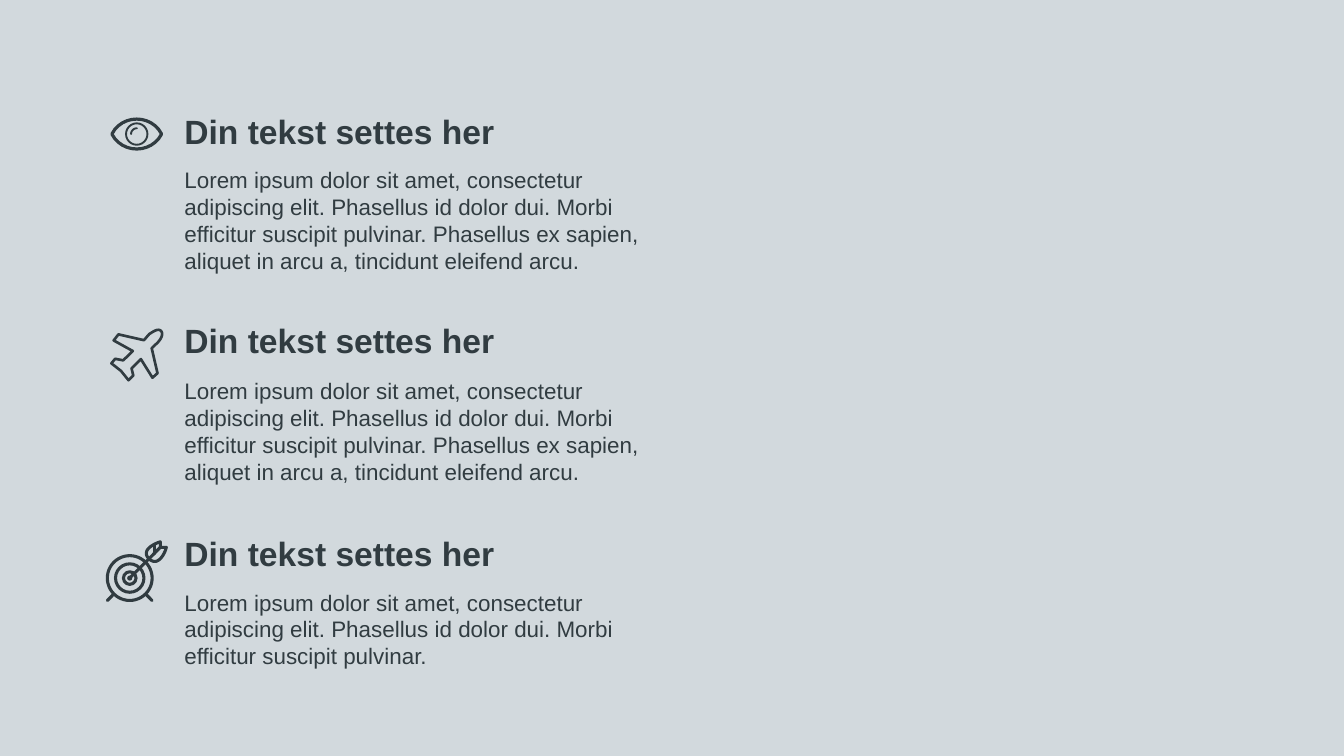
from pptx import Presentation
from pptx.dml.color import RGBColor
from pptx.enum.shapes import MSO_CONNECTOR, MSO_SHAPE
from pptx.enum.text import MSO_AUTO_SIZE
from pptx.oxml import parse_xml
from pptx.oxml.ns import nsdecls
from pptx.util import Pt

COLORS = {"background": "D2D9DD", "ink": "313C41"}
HEADING_FORMAT = {"name": "Arial", "size": Pt(48), "bold": True}
BODY_FORMAT = {"name": "Arial", "size": Pt(32), "bold": False}
TEXT_LEFT = 256.3
BODY_TOP, BODY_PITCH = 234, 301.7

HEADING = "Din tekst settes her"
SHORT_BODY = ("Lorem ipsum dolor sit amet, consectetur adipiscing elit. "
              "Phasellus id dolor dui. Morbi efficitur suscipit pulvinar.")
LONG_BODY = SHORT_BODY + " Phasellus ex sapien, aliquet in arcu a, tincidunt eleifend arcu."


def color(name):
    return RGBColor.from_string(COLORS[name])


def add_text(shapes, text, top, width, height, font_format):
    box = shapes.add_textbox(Pt(TEXT_LEFT), Pt(top), Pt(width), Pt(height))
    frame = box.text_frame
    frame.word_wrap = True
    frame.auto_size = MSO_AUTO_SIZE.SHAPE_TO_FIT_TEXT
    span = frame.paragraphs[0].add_run()
    span.text = text
    for name, value in font_format.items():
        setattr(span.font, name, value)
    span.font.color.rgb = color("ink")


def style_stroke(line, weight):
    """Give a line the ink colour, round caps and round joins."""
    line.color.rgb = color("ink")
    line.width = Pt(weight)
    element = line._get_or_add_ln()
    element.set("cap", "rnd")
    element.append(parse_xml(f"<a:round {nsdecls('a')}/>"))


def add_ring(shapes, center, radius, weight):
    x, y = center
    ring = shapes.add_shape(MSO_SHAPE.OVAL, Pt(x - radius), Pt(y - radius),
                            Pt(2 * radius), Pt(2 * radius))
    ring.shadow.inherit = False
    ring.fill.background()
    style_stroke(ring.line, weight)
    return ring


def add_stroke(shapes, start, end, weight):
    stroke = shapes.add_connector(MSO_CONNECTOR.STRAIGHT, *map(Pt, start + end))
    style_stroke(stroke.line, weight)
    stroke._element.spPr.append(parse_xml(f"<a:effectLst {nsdecls('a')}/>"))


def trace(steps, samples=12):
    """Turn points and (control, control, end) curves into plain points."""
    points = []
    for step in steps:
        if len(step) == 2:
            points.append(step)
            continue
        corners = (points[-1],) + step
        for i in range(1, samples + 1):
            t = i / samples
            weights = ((1 - t) ** 3, 3 * t * (1 - t) ** 2, 3 * t * t * (1 - t), t ** 3)
            points.append(tuple(sum(w * c[axis] for w, c in zip(weights, corners))
                                for axis in (0, 1)))
    return points


def add_outline(shapes, steps, weight, close=True):
    points = [(Pt(x), Pt(y)) for x, y in trace(steps)]
    builder = shapes.build_freeform(*points[0])
    builder.add_line_segments(points[1:], close=close)
    outline = builder.convert_to_shape()
    outline.shadow.inherit = False
    outline.fill.background()
    style_stroke(outline.line, weight)


def draw_eye(shapes):
    x, y = center = (195.3, 191.5)
    left, right = (x - 35.5, y), (x + 35.5, y)
    lids = [left]
    for side, rise, end in ((1, -28.5, right), (-1, 28.5, left)):
        lids.append(((x - side * 21, y + rise), (x + side * 21, y + rise), end))
    add_outline(shapes, lids, 4.6)
    add_ring(shapes, center, 15.3, 2.7)
    add_outline(shapes, [(195.6, 183.2), ((191, 183.2), (187.2, 187), (187.2, 191.5))],
                2.7, close=False)


def draw_plane(shapes):
    add_outline(shapes, [
        (183.6, 543.2), (172.8, 529.9), (159.1, 519.1), (164.5, 512.6),
        (176, 514.8), (189.7, 501.5), (162.4, 486.4), (169.2, 477.7),
        (205.6, 486), (213.1, 477.4),
        ((217.4, 474.5), (222.5, 471.2), (226.1, 471.2)),
        ((230.4, 471.2), (232.6, 475.2), (231.1, 480.2)),
        ((230, 483.5), (227.5, 487), (225.4, 489.2)),
        (216.7, 497.5), (225, 533.2), (217.8, 539.6), (201.2, 513),
        (187.9, 526.3), (190.4, 536.4)], 3.8)


def draw_target(shapes):
    weight = 4.4
    x, y = center = (185.3, 825.8)
    for radius in (32, 20.3, 9):
        add_ring(shapes, center, radius, weight)
    bullseye = add_ring(shapes, center, 2, 3.2)
    bullseye.fill.solid()
    bullseye.fill.fore_color.rgb = color("ink")
    for side in (-1, 1):
        add_stroke(shapes, (x + side * 22.7, y + 22.7), (x + side * 32, y + 32.2), weight)
    add_stroke(shapes, center, (229, 781.9), weight)
    add_stroke(shapes, (220.3, 777.6), (220.3, 791.3), weight)
    add_outline(shapes, [
        (229, 774),
        ((219.6, 776.9), (211, 782.6), (209.5, 787.7)),
        ((208.4, 792), (209.5, 794.9), (213.1, 798.5)),
        ((215.3, 800.6), (218.2, 802.1), (221, 802.1)),
        ((229, 802.1), (235.4, 790.6), (237.6, 781.9)),
        (229, 781.9)], weight)


def main():
    deck = Presentation()
    deck.slide_width, deck.slide_height = Pt(1919.52), Pt(1080)
    page = deck.slides.add_slide(deck.slide_layouts[6])
    page.background.fill.solid()
    page.background.fill.fore_color.rgb = color("background")

    items = [
        (draw_eye, 154.8, LONG_BODY, 162),
        (draw_plane, 452.9, LONG_BODY, 162),
        (draw_target, 757.4, SHORT_BODY, 123.8),
    ]
    for i, (draw_icon, heading_top, body, body_height) in enumerate(items):
        shapes = page.shapes.add_group_shape().shapes
        add_text(shapes, body, BODY_TOP + i * BODY_PITCH, 705.6, body_height, BODY_FORMAT)
        draw_icon(shapes)
        add_text(shapes, HEADING, heading_top, 663.1, 65.5, HEADING_FORMAT)
    deck.save("out.pptx")


if __name__ == "__main__":
    main()
